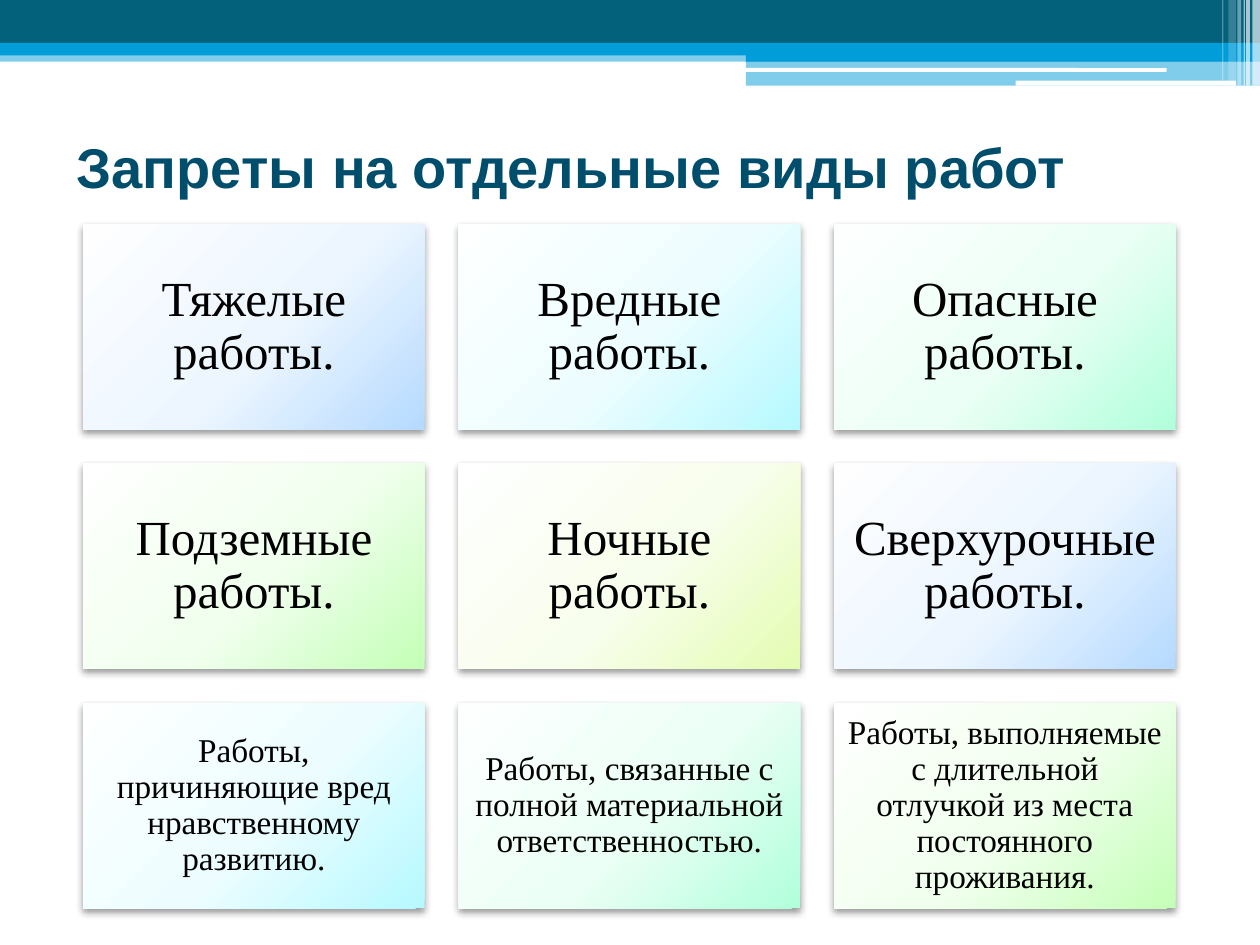
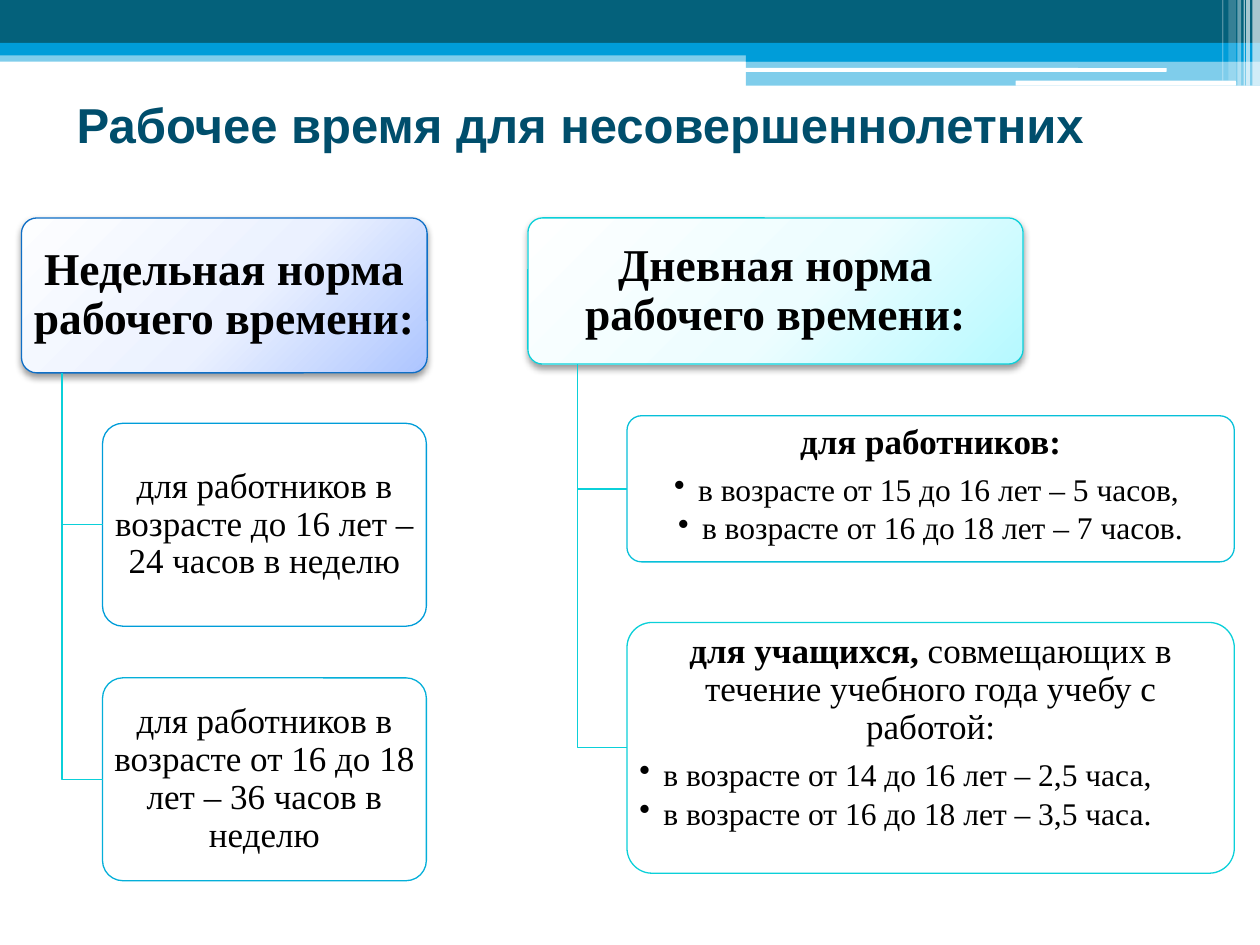
from pptx import Presentation
from pptx.dml.color import RGBColor
from pptx.enum.shapes import MSO_SHAPE
from pptx.enum.text import MSO_ANCHOR, PP_ALIGN
from pptx.oxml import parse_xml
from pptx.oxml.ns import nsdecls, qn
from pptx.oxml.xmlchemy import OxmlElement
from pptx.util import Inches, Pt

RECT, ROUND = MSO_SHAPE.RECTANGLE, MSO_SHAPE.ROUNDED_RECTANGLE
TOP, MIDDLE = MSO_ANCHOR.TOP, MSO_ANCHOR.MIDDLE
LEFT, CENTER = PP_ALIGN.LEFT, PP_ALIGN.CENTER

BLACK = RGBColor(0x00, 0x00, 0x00)
WHITE = RGBColor(0xFF, 0xFF, 0xFF)
NAVY = RGBColor(0x00, 0x4E, 0x6C)
TEAL = RGBColor(0x04, 0x61, 0x7B)
SKY = RGBColor(0x00, 0x9D, 0xD9)
AZURE = RGBColor(0x04, 0xAF, 0xD9)
LAGOON = RGBColor(0x07, 0xC0, 0xD9)
AQUA = RGBColor(0x0B, 0xD0, 0xD9)
COBALT = RGBColor(0x0F, 0x6F, 0xC6)


def shades(*codes):
    return [RGBColor.from_string(code) for code in codes]


BLUE = shades("FEFEFF", "EDF6FF", "B5DAFF")
CYAN = shades("FEFFFF", "EDFDFF", "B5F9FF")
MINT = shades("FDFFFE", "ECFFF6", "B1FFDB")
GREEN = shades("FEFFFE", "F1FFEE", "C4FFB7")
LIME = shades("FEFFFE", "F8FEED", "E4FCB2")
VIOLET = shades("FDFEFF", "EBF1FF", "ADC5FF")
TINTS = [BLUE, CYAN, MINT, GREEN, LIME]

BANDS = [
    (RECT, 0, 0.4, 10, 0.09, SKY, 50),
    (RECT, 0, 0, 10, 0.34, TEAL, 100),
    (RECT, 0, 0.34, 10, 0.1, SKY, 100),
    (RECT, 5.92, 0.39, 4.08, 0.1, SKY, 100),
    (RECT, 5.92, 0.48, 4.08, 0.2, SKY, 50),
    (ROUND, 5.91, 0.54, 3.35, 0.03, WHITE, 100),
    (ROUND, 8.06, 0.64, 1.75, 0.04, WHITE, 100),
    (RECT, 9.94, 0, 0.06, 0.68, WHITE, 65),
    (RECT, 9.89, 0, 0.03, 0.68, WHITE, 65),
    (RECT, 9.87, 0, 0.01, 0.68, WHITE, 60),
    (RECT, 9.82, 0, 0.03, 0.68, WHITE, 40),
    (RECT, 9.75, 0, 0.06, 0.64, WHITE, 20),
    (RECT, 9.7, 0, 0.01, 0.64, WHITE, 30),
]

WORKS = [
    "Тяжелые работы.",
    "Вредные работы.",
    "Опасные работы.",
    "Подземные работы.",
    "Ночные работы.",
    "Сверхурочные работы.",
    "Работы, причиняющие вред нравственному развитию.",
    "Работы, связанные с полной материальной ответственностью.",
    "Работы, выполняемые с длительной отлучкой из места постоянного проживания.",
]


class Deck:
    head_font = "Arial"
    body_font = "Times New Roman"
    line_width = Pt(0.75)

    def __init__(self):
        self.show = Presentation()
        self.show.slide_width = Inches(10)
        self.show.slide_height = Inches(7.5)
        self.slide = None

    def page(self, title, size, *place):
        self.slide = self.show.slides.add_slide(self.show.slide_layouts[6])
        for kind, left, top, width, height, color, solid in BANDS:
            self.shape(kind, (left, top, width, height), color, solid)
        box = self.slide.shapes.add_textbox(*map(Inches, place))
        box.text_frame.word_wrap = True
        box.text_frame.vertical_anchor = MIDDLE
        line = box.text_frame.paragraphs[0]
        line.text = title
        self.style(line.font, self.head_font, size, NAVY, True)

    def style(self, font, name, size, color, bold):
        font.name = name
        font.size = Pt(size)
        font.color.rgb = color
        font.bold = bold

    def shape(self, kind, place, fill, solid=100, edge=None):
        shape = self.slide.shapes.add_shape(kind, *map(Inches, place))
        shape.shadow.inherit = False
        shape.fill.solid()
        shape.fill.fore_color.rgb = fill
        if solid < 100:
            alpha = OxmlElement("a:alpha")
            alpha.set("val", str(solid * 1000))
            shape.element.spPr.find(f".//{qn('a:srgbClr')}").append(alpha)
        if edge is None:
            shape.line.fill.background()
        else:
            shape.line.color.rgb = edge
            shape.line.width = self.line_width
        return shape

    def card(self, kind, place, tint, edge=None):
        shape = self.shape(kind, place, WHITE, edge=edge)
        stops = "".join(
            f'<a:gs pos="{spot}"><a:srgbClr val="{color}"/></a:gs>'
            for spot, color in zip((0, 55000, 100000), tint))
        props = shape.element.spPr
        props.replace(props.find(qn("a:solidFill")), parse_xml(
            f'<a:gradFill {nsdecls("a")} rotWithShape="1"><a:gsLst>{stops}</a:gsLst>'
            '<a:path path="circle"><a:fillToRect l="-40000" t="-90000"'
            ' r="140000" b="190000"/></a:path></a:gradFill>'))
        props.find(qn("a:effectLst")).append(parse_xml(
            f'<a:outerShdw {nsdecls("a")} blurRad="{Pt(4.1)}" dist="{Pt(2)}"'
            ' dir="5400000" rotWithShape="0"><a:srgbClr val="000000">'
            '<a:alpha val="40000"/></a:srgbClr></a:outerShdw>'))
        return shape

    def inset(self, shape, side, edge, anchor=MIDDLE):
        frame = shape.text_frame
        frame.word_wrap = True
        frame.vertical_anchor = anchor
        frame.margin_left = frame.margin_right = Inches(side)
        frame.margin_top = frame.margin_bottom = Inches(edge)

    def text(self, shape, words, size, bold=False, align=CENTER, after=0.35):
        frame = shape.text_frame
        line = frame.paragraphs[-1]
        if line.runs:
            line = frame.add_paragraph()
        line.alignment = align
        line.line_spacing = 0.9
        line.space_after = Pt(round(size * after, 1))
        line.add_run().text = words
        self.style(line.font, self.body_font, size, BLACK, bold)
        return line

    def bullet(self, shape, words, align):
        line = self.text(shape, words, 18, align=align, after=0.15)
        line.level = 1
        props = line._p.get_or_add_pPr()
        props.set("marL", str(Inches(0.19)))
        props.set("indent", str(Inches(-0.19)))
        mark = OxmlElement("a:buChar")
        mark.set("char", "•")
        props.insert_element_before(mark, "a:tabLst", "a:defRPr", "a:extLst")

    def head(self, place, words, tint, edge):
        shape = self.card(ROUND, place, tint, edge)
        shape.adjustments[0] = 0.1
        self.inset(shape, 0.05, 0.04)
        self.text(shape, words, 26, True)
        return shape

    def leaf(self, head, top, width, height, edge, anchor=MIDDLE):
        left = head.left.inches + head.width.inches * 0.2
        shape = self.shape(ROUND, (left, top, width, height), WHITE, 90, edge)
        shape.adjustments[0] = 0.1
        self.inset(shape, 0.04, 0.03, anchor)
        self.branch(head, shape)
        return shape

    def branch(self, head, leaf):
        trunk = head.left + head.width // 10
        level = leaf.top + leaf.height // 2
        route = self.slide.shapes.build_freeform(trunk, head.top + head.height)
        route.add_line_segments([(trunk, level), (leaf.left, level)], close=False)
        line = route.convert_to_shape()
        line.shadow.inherit = False
        line.fill.background()
        line.line.color.rgb = AQUA
        line.line.width = self.line_width


def bans(deck):
    deck.page("Запреты на отдельные виды работ", 32, 0.51, 0.76, 9, 1.12)
    for index, work in enumerate(WORKS):
        row, col = divmod(index, 3)
        place = (0.66 + 2.98 * col, 1.78 + 1.9 * row, 2.71, 1.63)
        tile = deck.card(RECT, place, TINTS[index % len(TINTS)])
        size, gap = (28, 0.12) if row < 2 else (19, 0.08)
        deck.inset(tile, gap, gap)
        deck.text(tile, work, size)


def hours(deck):
    deck.page("Рабочее время для несовершеннолетних", 28, 0.51, 0.52, 8.83, 0.92)

    week = deck.head((0.17, 1.73, 3.22, 1.23),
                     "Недельная норма рабочего времени:", VIOLET, COBALT)
    for top, edge, words in [
        (3.36, SKY, "для работников в возрасте до 16 лет – 24 часов в неделю"),
        (5.38, AZURE, "для работников в возрасте от 16 до 18 лет – 36 часов в неделю"),
    ]:
        deck.text(deck.leaf(week, top, 2.57, 1.61, edge), words, 20)

    day = deck.head((4.19, 1.73, 3.93, 1.16),
                    "Дневная норма рабочего времени:", CYAN, AQUA)
    staff = deck.leaf(day, 3.3, 4.82, 1.16, LAGOON, TOP)
    deck.text(staff, "для работников:", 20, True)
    deck.bullet(staff, "в возрасте от 15 до 16 лет – 5 часов, ", CENTER)
    deck.bullet(staff, "в возрасте от 16 до 18 лет – 7 часов.", CENTER)

    pupils = deck.leaf(day, 4.94, 4.82, 1.99, AQUA, TOP)
    line = deck.text(pupils, "для учащихся, ", 20, None)
    line.runs[0].font.bold = True
    line.add_run().text = "совмещающих в течение учебного года учебу с работой:"
    deck.bullet(pupils, "в возрасте от 14 до 16 лет – 2,5 часа,", LEFT)
    deck.bullet(pupils, "в возрасте от 16 до 18 лет – 3,5 часа.", LEFT)


def main():
    deck = Deck()
    bans(deck)
    hours(deck)
    deck.show.save("out.pptx")


if __name__ == "__main__":
    main()
